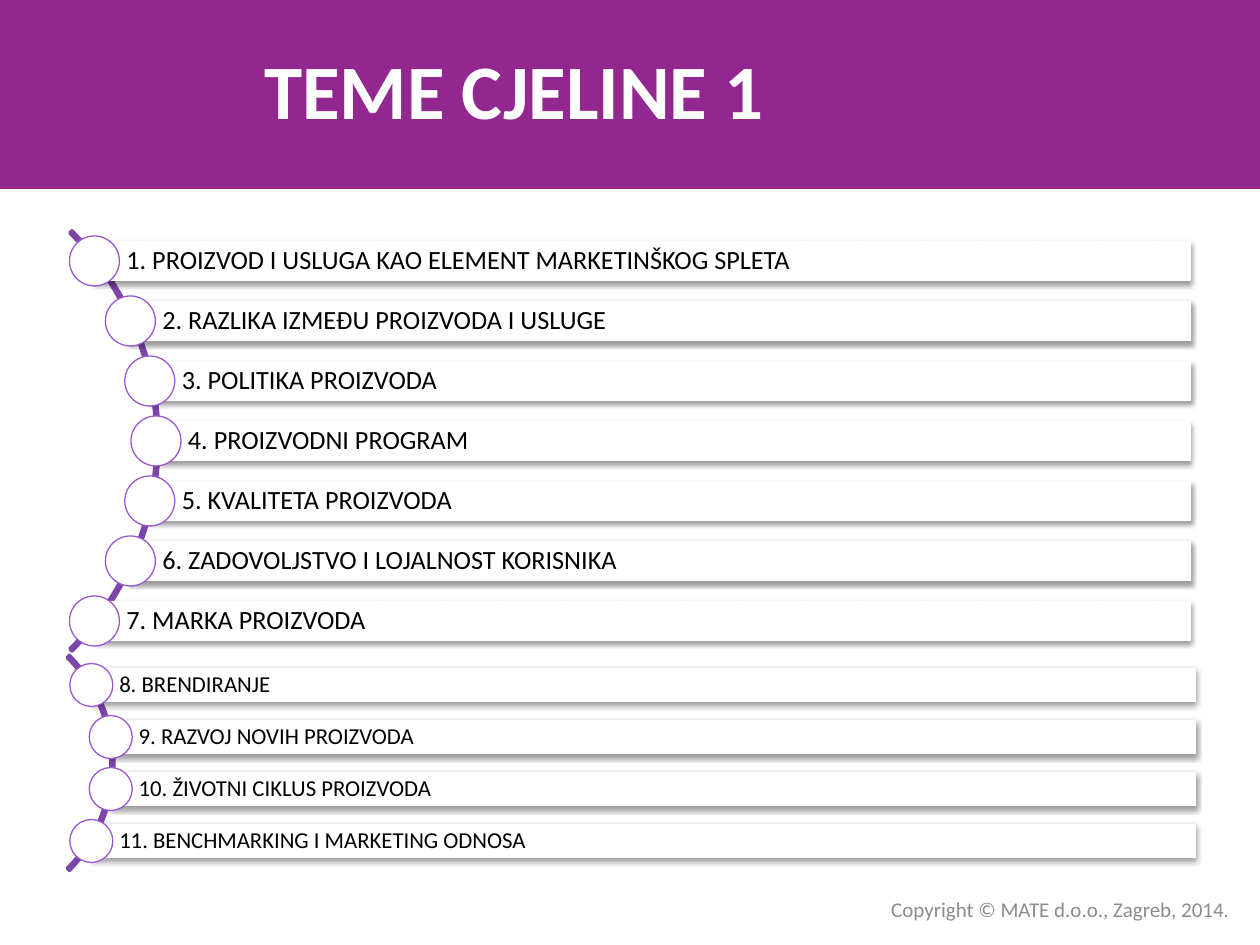
from math import sqrt

from lxml.etree import SubElement
from pptx import Presentation
from pptx.dml.color import RGBColor
from pptx.enum.shapes import MSO_SHAPE
from pptx.enum.text import MSO_ANCHOR, PP_ALIGN
from pptx.oxml.ns import qn
from pptx.util import Emu, Pt

EMU_PER_PX = 914400 / 126

PURPLE = RGBColor(0x92, 0x27, 0x8F)
ARC_PURPLE = RGBColor(0x7C, 0x46, 0xA9)
RING_PURPLE = RGBColor(0x9B, 0x57, 0xD3)
WHITE = RGBColor(0xFF, 0xFF, 0xFF)
BLACK = RGBColor(0x00, 0x00, 0x00)
GRAY = RGBColor(0x8C, 0x8C, 0x8C)

FIRST_TOPICS = [
    "1. PROIZVOD I USLUGA KAO ELEMENT MARKETINŠKOG SPLETA",
    "2. RAZLIKA IZMEĐU PROIZVODA I USLUGE",
    "3. POLITIKA PROIZVODA",
    "4. PROIZVODNI PROGRAM",
    "5. KVALITETA PROIZVODA",
    "6. ZADOVOLJSTVO I LOJALNOST KORISNIKA",
    "7. MARKA PROIZVODA",
]
SECOND_TOPICS = [
    "8. BRENDIRANJE",
    "9. RAZVOJ NOVIH PROIZVODA",
    "10. ŽIVOTNI CIKLUS PROIZVODA",
    "11. BENCHMARKING I MARKETING ODNOSA",
]


def px(length):
    return Emu(round(length * EMU_PER_PX))


def area(left, top, width, height):
    return px(left), px(top), px(width), px(height)


def write(box, text, size, color, align, bold=False):
    frame = box.text_frame
    frame.text = text
    frame.word_wrap = True
    frame.vertical_anchor = MSO_ANCHOR.MIDDLE
    para = frame.paragraphs[0]
    para.alignment = align
    font = para.runs[0].font
    font.name, font.size, font.bold = "Calibri", Pt(size), bold
    font.color.rgb = color


def add_figure(shapes, kind, place, fill=None, line=None, line_width=0):
    figure = shapes.add_shape(kind, *area(*place))
    figure.shadow.inherit = False
    if fill is None:
        figure.fill.background()
    else:
        figure.fill.solid()
        figure.fill.fore_color.rgb = fill
    if line is None:
        figure.line.fill.background()
    else:
        figure.line.color.rgb = line
        figure.line.width = Pt(line_width)
    return figure


def add_drop_shadow(figure):
    effects = figure.element.spPr.find(qn("a:effectLst"))
    shadow = SubElement(effects, qn("a:outerShdw"), blurRad=str(Pt(3.1)),
                        dist=str(Pt(1.6)), dir="5400000", rotWithShape="0")
    color = SubElement(shadow, qn("a:srgbClr"), val=str(BLACK))
    SubElement(color, qn("a:alpha"), val="38000")


def add_topic(shapes, text, center_x, center_y, right, bar_height, circle, inset, size):
    place = (center_x, center_y - bar_height / 2, right - center_x, bar_height)
    bar = add_figure(shapes, MSO_SHAPE.RECTANGLE, place, WHITE)
    add_drop_shadow(bar)
    write(bar, text, size, BLACK, PP_ALIGN.LEFT)
    frame = bar.text_frame
    frame.margin_left = px(inset)
    frame.margin_right = frame.margin_top = frame.margin_bottom = px(5)
    frame.paragraphs[0].line_spacing = 0.9
    place = (center_x - circle / 2, center_y - circle / 2, circle, circle)
    add_figure(shapes, MSO_SHAPE.OVAL, place, WHITE, RING_PURPLE, 0.75)


def add_curved_list(slide, topics, arc_x, arc_y, arc_radius, arc_thickness,
                    rail_radius, pitch, **topic_style):
    """Place evenly spaced topics so that their circles follow one arc."""
    shapes = slide.shapes.add_group_shape().shapes
    place = (arc_x - arc_radius, arc_y - arc_radius, 2 * arc_radius, 2 * arc_radius)
    arc = add_figure(shapes, MSO_SHAPE.BLOCK_ARC, place, line=ARC_PURPLE, line_width=2)
    for index, value in enumerate((189, 27, arc_thickness)):
        arc.adjustments[index] = value
    for index, topic in enumerate(topics):
        offset = (index - (len(topics) - 1) / 2) * pitch
        center_x = arc_x + sqrt(rail_radius ** 2 - offset ** 2)
        add_topic(shapes, topic, center_x, arc_y + offset, **topic_style)


def add_heading(slide):
    title = slide.shapes.title
    title.left, title.top, title.width, title.height = area(0, 10, 1029, 158)
    write(title, "TEME CJELINE 1", 44, WHITE, PP_ALIGN.CENTER, bold=True)
    banner = add_figure(slide.shapes, MSO_SHAPE.RECTANGLE, (0, 0, 1260, 189), PURPLE)
    title.element.addprevious(banner.element)


def main():
    deck = Presentation()
    deck.slide_width, deck.slide_height = px(1260), px(945)
    slide = deck.slides.add_slide(deck.slide_layouts[5])
    add_heading(slide)
    add_curved_list(slide, FIRST_TOPICS, arc_x=-138, arc_y=441, arc_radius=297,
                    arc_thickness=0.005, rail_radius=294, pitch=60, right=1191,
                    bar_height=40, circle=50, inset=32, size=15)
    footer = slide.shapes.add_textbox(*area(591, 890, 651, 38))
    write(footer, "Copyright © MATE d.o.o., Zagreb, 2014.", 12, GRAY, PP_ALIGN.RIGHT)
    add_curved_list(slide, SECOND_TOPICS, arc_x=-38, arc_y=763, arc_radius=152,
                    arc_thickness=0.01, rail_radius=151, pitch=52, right=1196,
                    bar_height=34, circle=43, inset=28, size=13)
    deck.save("out.pptx")


if __name__ == "__main__":
    main()
